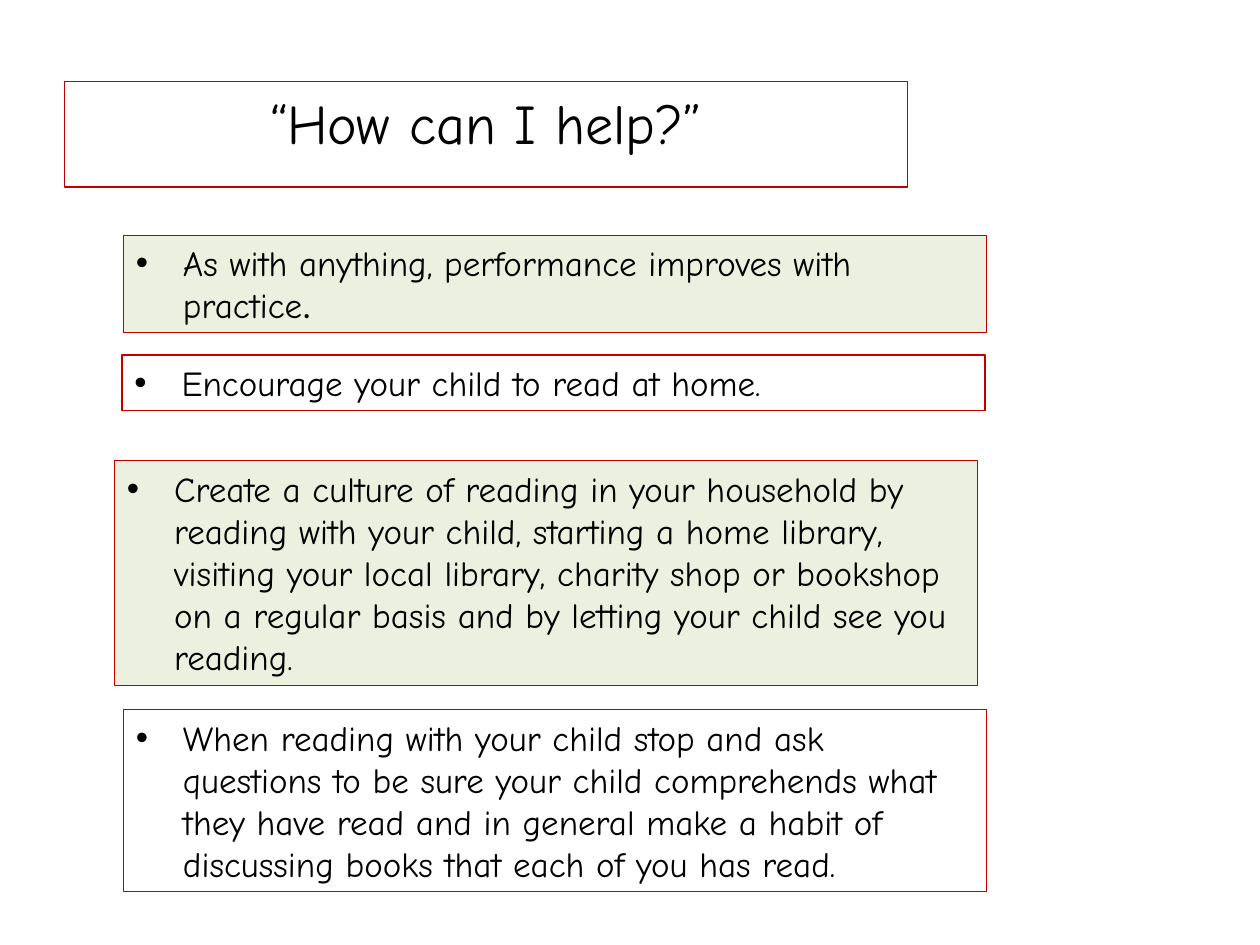
from lxml.etree import SubElement
from pptx import Presentation
from pptx.dml.color import RGBColor
from pptx.enum.shapes import MSO_SHAPE
from pptx.enum.text import MSO_ANCHOR, MSO_AUTO_SIZE, PP_ALIGN
from pptx.oxml.ns import qn
from pptx.util import Cm, Pt

COLORS = {"green": "EBF1DE", "white": "FFFFFF", "border": "C00000", "text": "000000"}
FONT = "Comic Neue"
TIP_WIDTH = 17.4
INDENT = Cm(0.95)

TIPS = [
    (2.49, 4.75, 1.96, "green", [
        ("As with anything, performance improves with practice", FONT),
        (".", "Calibri"),
    ]),
    (2.46, 7.16, 1.11, "white", [("Encourage your child to read at home.", FONT)]),
    (2.31, 9.29, 4.53, "green", [(
        "Create a culture of reading in your household by reading with your child, "
        "starting a home library, visiting your local library, charity shop or bookshop "
        "on a regular basis and by letting your child see you reading.", FONT)]),
    (2.49, 14.31, 3.67, "white", [(
        "When reading with your child stop and ask questions to be sure your child "
        "comprehends what they have read and in general make a habit of discussing "
        "books that each of you has read.", FONT)]),
]


def color(name):
    return RGBColor.from_string(COLORS[name])


def style_box(shape, fill):
    shape.fill.solid()
    shape.fill.fore_color.rgb = color(fill)
    shape.line.color.rgb = color("border")
    shape.line.width = Pt(0.75)
    frame = shape.text_frame
    frame.word_wrap = True
    frame.auto_size = MSO_AUTO_SIZE.SHAPE_TO_FIT_TEXT
    frame.vertical_anchor = MSO_ANCHOR.TOP
    return frame


def style_paragraph(paragraph, size, alignment):
    paragraph.alignment = alignment
    paragraph.font.size = Pt(size)
    paragraph.font.color.rgb = color("text")


def add_bullet(paragraph):
    properties = paragraph._p.get_or_add_pPr()
    properties.set("marL", str(INDENT))
    properties.set("indent", str(-INDENT))
    SubElement(properties, qn("a:buFont"), typeface="Arial")
    SubElement(properties, qn("a:buChar"), char="•")


def set_title(slide, text):
    title = slide.shapes.title
    title.left, title.top, title.width, title.height = Cm(1.3), Cm(1.65), Cm(17), Cm(1.63)
    frame = style_box(title, "white")
    frame.text = text
    paragraph = frame.paragraphs[0]
    style_paragraph(paragraph, 32, PP_ALIGN.CENTER)
    paragraph.font.name = FONT


def add_tip(slide, left, top, height, fill, runs):
    shape = slide.shapes.add_shape(
        MSO_SHAPE.RECTANGLE, Cm(left), Cm(top), Cm(TIP_WIDTH), Cm(height))
    shape.shadow.inherit = False
    paragraph = style_box(shape, fill).paragraphs[0]
    add_bullet(paragraph)
    style_paragraph(paragraph, 20, PP_ALIGN.LEFT)
    for text, font in runs:
        run = paragraph.add_run()
        run.text = text
        run.font.name = font


def main():
    presentation = Presentation()
    presentation.slide_width, presentation.slide_height = Cm(25.4), Cm(19.05)
    slide = presentation.slides.add_slide(presentation.slide_layouts[5])
    set_title(slide, "“How can I help?”")
    for tip in TIPS:
        add_tip(slide, *tip)
    presentation.save("out.pptx")


if __name__ == "__main__":
    main()
